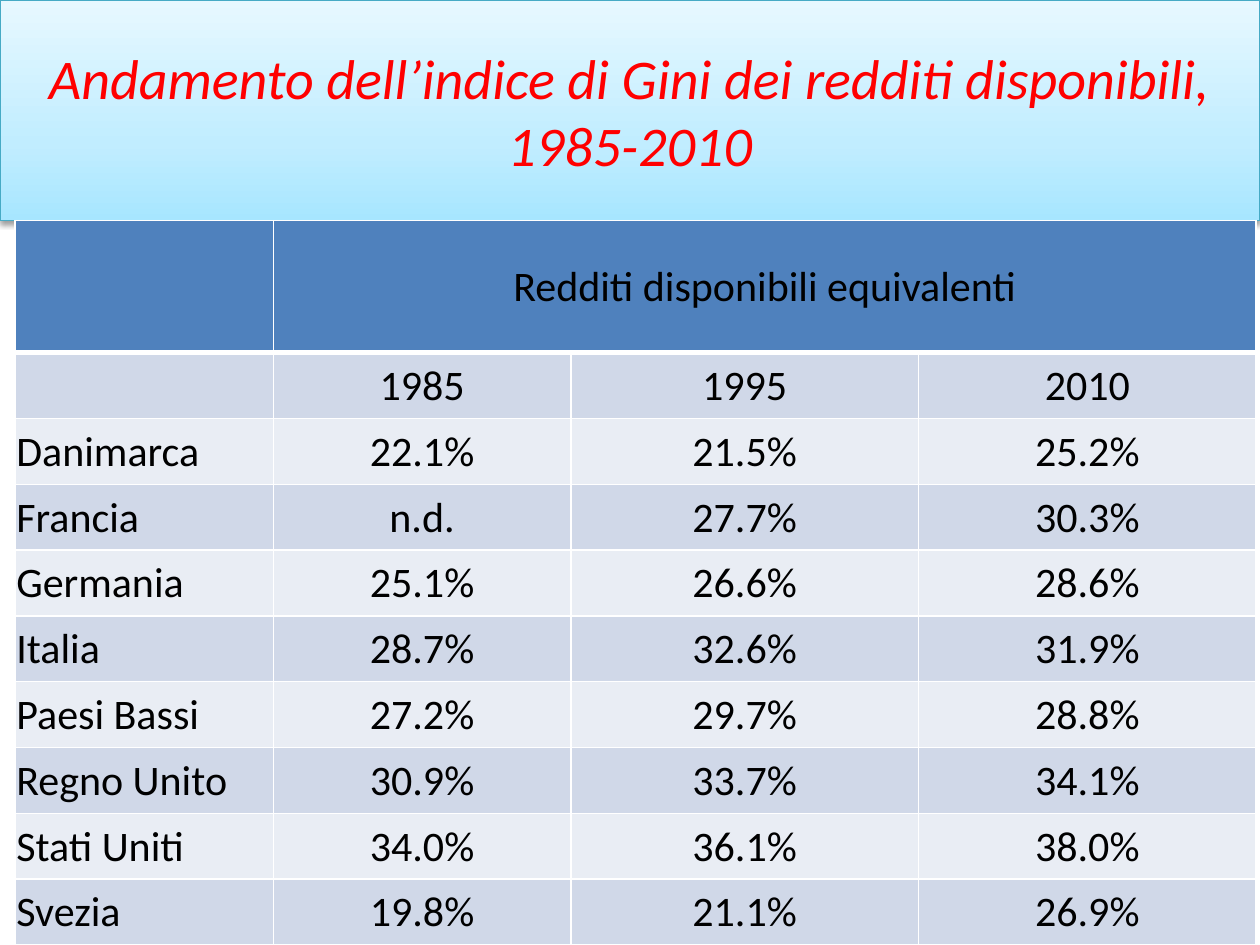
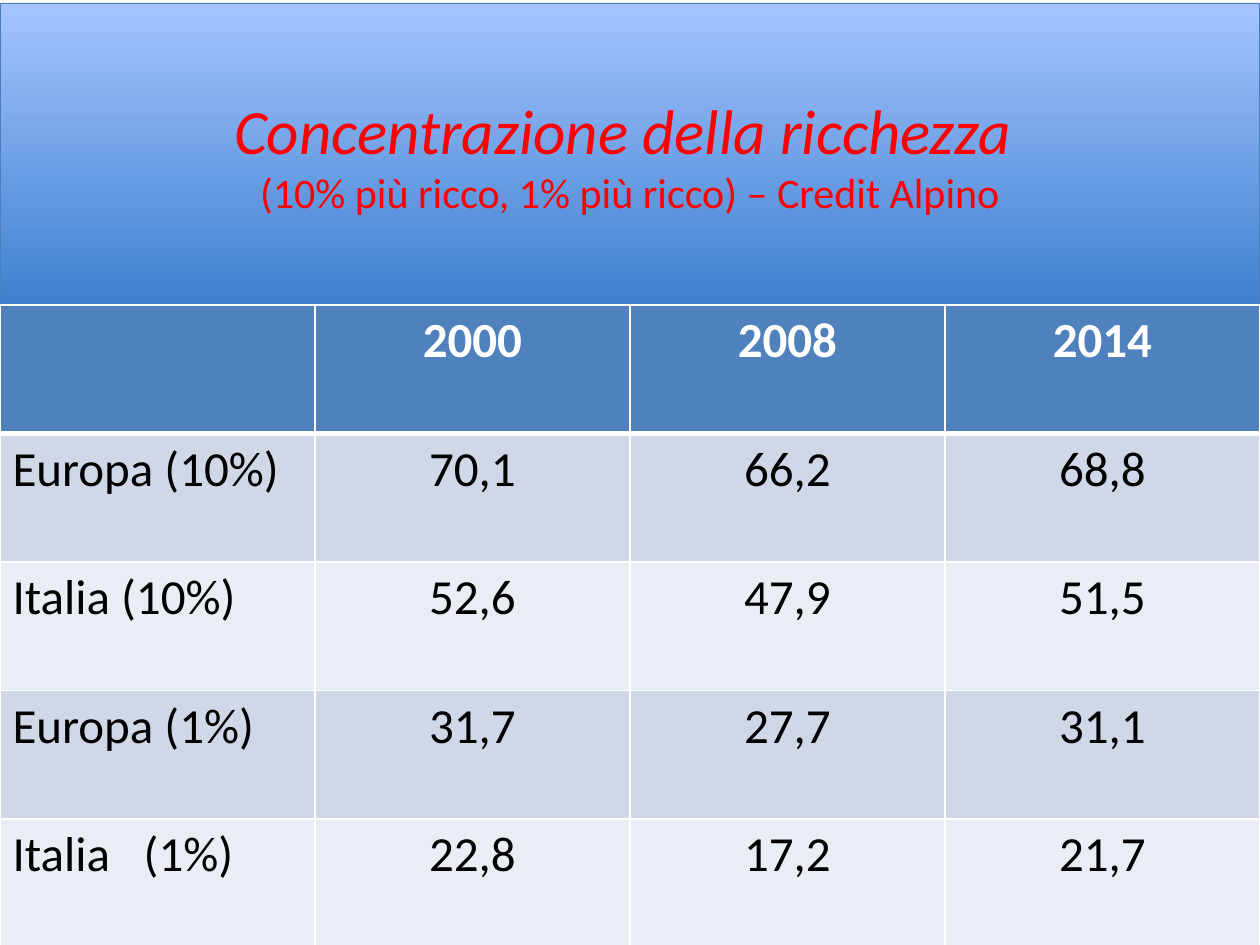
from dataclasses import dataclass

from lxml import etree
from pptx import Presentation
from pptx.dml.color import RGBColor
from pptx.enum.shapes import MSO_SHAPE
from pptx.enum.text import MSO_ANCHOR, PP_ALIGN
from pptx.oxml.ns import qn
from pptx.util import Inches, Pt

RECTANGLE = MSO_SHAPE.RECTANGLE
CENTER, LEFT = PP_ALIGN.CENTER, PP_ALIGN.LEFT
MIDDLE, TOP = MSO_ANCHOR.MIDDLE, MSO_ANCHOR.TOP

# The slide is a grid of 100 columns by 75 rows of square units.
COLUMNS, ROWS = 100, 75
UNIT = Inches(0.1)


@dataclass(frozen=True)
class Theme:
    font: str = "Calibri"
    title: str = "FF0000"
    ink: str = "000000"
    white: str = "FFFFFF"
    header: str = "4F81BD"
    bands: tuple = ("D0D8E8", "E9EDF4")
    rule: float = 1
    header_rule: float = 3
    outline: float = 0.75
    small: int = 24
    medium: int = 28
    large: int = 32
    huge: int = 36


@dataclass(frozen=True)
class BandStyle:
    """Colours of a title band; stops run from its bottom to its top."""
    stops: tuple
    outline: str
    shadow_alpha: int
    shadow_distance: float


@dataclass(frozen=True)
class TableStyle:
    size: int
    anchor: int
    margins: tuple
    header_ink: str
    header_bold: bool


@dataclass(frozen=True)
class Box:
    left: float
    top: float
    width: float
    height: float

    def place(self):
        return [units(n) for n in (self.left, self.top, self.width, self.height)]


THEME = Theme()
SKY = BandStyle(((0, "A7E6FF"), (35, "C1EDFF"), (100, "E7F8FF")), "46AAC5", 38, 1.6)
BLUE = BandStyle(((0, "3F80CE"), (100, "A4C4FF")), "4B7EBC", 35, 1.8)
COMPACT = TableStyle(THEME.small, MIDDLE, (0.1, 0.1, 0.1, 0), THEME.ink, False)
ROOMY = TableStyle(THEME.medium, TOP, (1, 0.5, 1, 0.5), THEME.white, True)

GINI_ROWS = [
    ("", "Redditi disponibili equivalenti", "", ""),
    ("", "1985", "1995", "2010"),
    ("Danimarca", "22.1%", "21.5%", "25.2%"),
    ("Francia", "n.d.", "27.7%", "30.3%"),
    ("Germania", "25.1%", "26.6%", "28.6%"),
    ("Italia", "28.7%", "32.6%", "31.9%"),
    ("Paesi Bassi", "27.2%", "29.7%", "28.8%"),
    ("Regno Unito", "30.9%", "33.7%", "34.1%"),
    ("Stati Uniti", "34.0%", "36.1%", "38.0%"),
    ("Svezia", "19.8%", "21.1%", "26.9%"),
]
WEALTH_ROWS = [
    ("", "2000", "2008", "2014"),
    ("Europa (10%)", "70,1", "66,2", "68,8"),
    ("Italia (10%)", "52,6", "47,9", "51,5"),
    ("Europa (1%)", "31,7", "27,7", "31,1"),
    ("Italia\t(1%)", "22,8", "17,2", "21,7"),
]
LABEL_TAB = 10.4


def units(count):
    return round(count * UNIT)


def rgb(value):
    return RGBColor.from_string(value)


def add_xml(parent, tag, **attributes):
    values = {name: str(value) for name, value in attributes.items()}
    return etree.SubElement(parent, qn(tag), values)


def write(paragraph, text, size, color, align=CENTER, bold=False, italic=False):
    paragraph.text = text
    paragraph.alignment = align
    font = paragraph.font
    font.name, font.size = THEME.font, Pt(size)
    font.bold, font.italic = bold, italic
    font.color.rgb = rgb(color)


def paint_gradient(fill, stops):
    """Fill upwards with any number of (percent, colour) stops."""
    fill.gradient()
    fill.gradient_angle = 90
    stop_list = fill._xPr.find(qn("a:gradFill")).find(qn("a:gsLst"))
    for stop in list(stop_list):
        stop_list.remove(stop)
    for percent, color in stops:
        stop = add_xml(stop_list, "a:gs", pos=percent * 1000)
        add_xml(stop, "a:srgbClr", val=color)


def cast_shadow(shape, style):
    shape.shadow.inherit = False
    effects = shape._element.spPr.find(qn("a:effectLst"))
    shadow = add_xml(effects, "a:outerShdw", blurRad=Pt(3.1),
                     dist=Pt(style.shadow_distance), dir=90 * 60000, rotWithShape=0)
    color = add_xml(shadow, "a:srgbClr", val=THEME.ink)
    add_xml(color, "a:alpha", val=style.shadow_alpha * 1000)


def add_title_band(slide, box, style, lines):
    """Place a shaded band with lines of (text, size, italic)."""
    band = slide.shapes.add_shape(RECTANGLE, *box.place())
    paint_gradient(band.fill, style.stops)
    band.line.color.rgb = rgb(style.outline)
    band.line.width = Pt(THEME.outline)
    cast_shadow(band, style)
    frame = band.text_frame
    frame.word_wrap = True
    frame.vertical_anchor = MIDDLE
    for index, (text, size, italic) in enumerate(lines):
        paragraph = frame.add_paragraph() if index else frame.paragraphs[0]
        write(paragraph, text, size, THEME.title, italic=italic)


def rule_cell(cell, top, bottom):
    """Draw white borders; the side rules always have the thin width."""
    properties = cell._tc.get_or_add_tcPr()
    widths = {"a:lnL": THEME.rule, "a:lnR": THEME.rule, "a:lnT": top, "a:lnB": bottom}
    for tag, width in widths.items():
        line = add_xml(properties, tag, w=Pt(width))
        add_xml(add_xml(line, "a:solidFill"), "a:srgbClr", val=THEME.white)


def set_tab(paragraph, position):
    tabs = etree.Element(qn("a:tabLst"))
    add_xml(tabs, "a:tab", pos=units(position), algn="l")
    paragraph._p.get_or_add_pPr().insert(0, tabs)


def fill_cell(cell, text, row, column, style):
    is_header = row == 0
    rule_cell(cell,
              top=THEME.header_rule if row == 1 else THEME.rule,
              bottom=THEME.header_rule if is_header else THEME.rule)
    cell.fill.solid()
    cell.fill.fore_color.rgb = rgb(THEME.header if is_header else THEME.bands[(row - 1) % 2])
    cell.vertical_anchor = style.anchor
    (cell.margin_left, cell.margin_top,
     cell.margin_right, cell.margin_bottom) = map(units, style.margins)
    if text:
        paragraph = cell.text_frame.paragraphs[0]
        write(paragraph, text, style.size,
              style.header_ink if is_header else THEME.ink,
              align=CENTER if column else LEFT,
              bold=is_header and style.header_bold)
        if "\t" in text:
            set_tab(paragraph, LABEL_TAB)


def add_data_table(slide, box, rows, column_widths, header_height, style):
    table = slide.shapes.add_table(len(rows), len(column_widths), *box.place()).table
    table.first_row = table.horz_banding = False
    for column, width in zip(table.columns, column_widths):
        column.width = units(width)
    body_height = (box.height - header_height) / (len(rows) - 1)
    for index, row in enumerate(table.rows):
        row.height = units(body_height if index else header_height)
    for row, texts in enumerate(rows):
        for column, text in enumerate(texts):
            fill_cell(table.cell(row, column), text, row, column, style)
    return table


def add_gini_slide(slide):
    band = Box(0, 0, COLUMNS, 17.5)
    add_title_band(slide, band, SKY, [
        ("Andamento dell’indice di Gini dei redditi disponibili, 1985-2010",
         THEME.large, True)])
    box = Box(1.2, band.height, 98.4, ROWS - band.height)
    table = add_data_table(slide, box, GINI_ROWS, (20.5, 23.6, 27.6, 26.8), 10.5, COMPACT)
    table.cell(0, 1).merge(table.cell(0, 3))


def add_wealth_slide(slide):
    band = Box(0, 0.3, COLUMNS, 23.9)
    add_title_band(slide, band, BLUE, [
        ("Concentrazione della ricchezza ", THEME.huge, True),
        ("(10% più ricco, 1% più ricco) – Credit Alpino", THEME.small, False)])
    box = Box(0, band.top + band.height, COLUMNS, 51)
    add_data_table(slide, box, WEALTH_ROWS, [COLUMNS / 4] * 4,
                   box.height / len(WEALTH_ROWS), ROOMY)


def main():
    deck = Presentation()
    deck.slide_width, deck.slide_height = units(COLUMNS), units(ROWS)
    blank = deck.slide_layouts[6]
    for build in (add_gini_slide, add_wealth_slide):
        build(deck.slides.add_slide(blank))
    deck.save("out.pptx")


if __name__ == "__main__":
    main()
